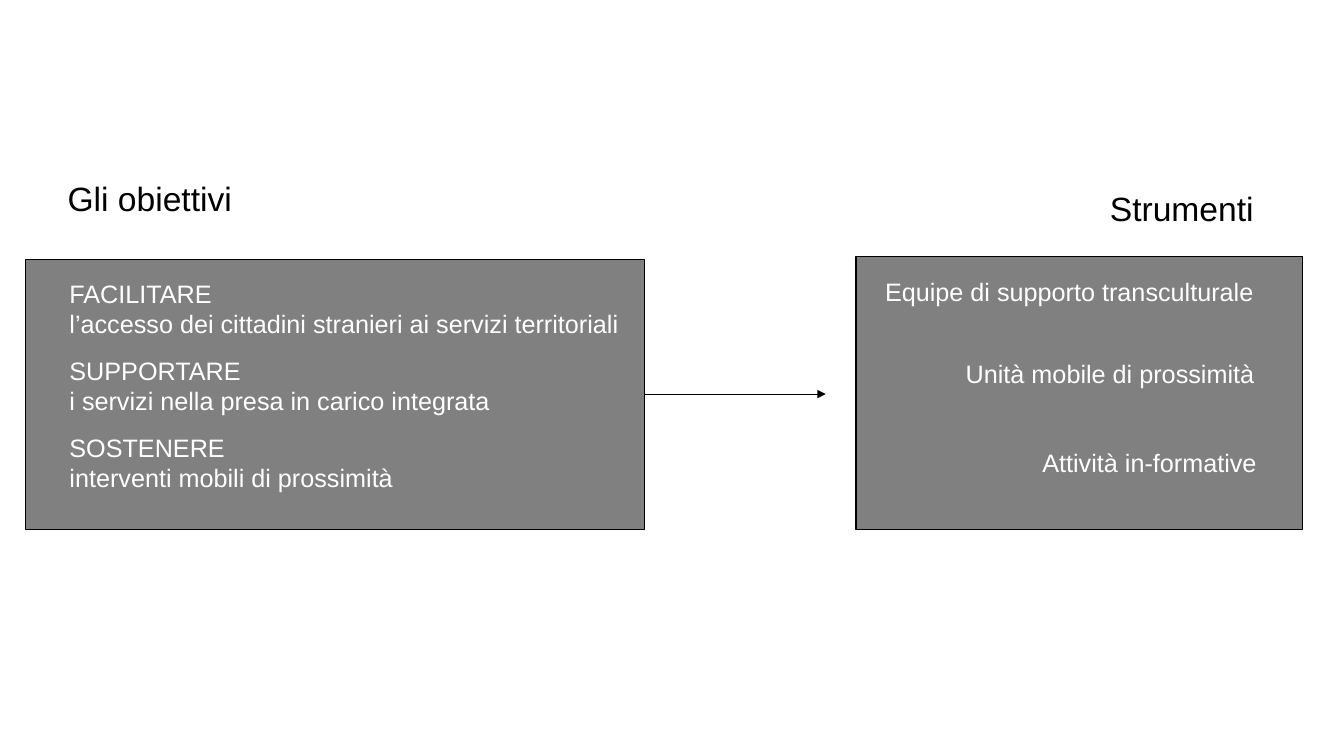
from lxml import etree
from pptx import Presentation
from pptx.dml.color import RGBColor
from pptx.enum.shapes import MSO_CONNECTOR, MSO_SHAPE
from pptx.enum.text import MSO_ANCHOR, MSO_AUTO_SIZE, PP_ALIGN
from pptx.oxml.ns import qn
from pptx.util import Inches, Pt

RECTANGLE = MSO_SHAPE.RECTANGLE
STRAIGHT = MSO_CONNECTOR.STRAIGHT
TOP = MSO_ANCHOR.TOP
LEFT = PP_ALIGN.LEFT
NO_AUTOFIT = MSO_AUTO_SIZE.NONE

BLACK, WHITE, GRAY = "000000", "FFFFFF", "808080"
RIGHT_EDGE = 13.14


def color(value):
    return RGBColor.from_string(value)


def fill_text(s, lines, size, text_color, inset):
    """Write lines as left-aligned paragraphs from the top of the shape."""
    tf = s.text_frame
    tf.text = "\n".join(lines)
    tf.word_wrap = True
    tf.auto_size = NO_AUTOFIT
    tf.vertical_anchor = TOP
    tf.margin_left = tf.margin_right = Inches(inset)
    tf.margin_top = tf.margin_bottom = Inches(inset)
    for p in tf.paragraphs:
        p.alignment = LEFT
        for r in p.runs:
            r.font.name = "Arial"
            r.font.size = Pt(size)
            r.font.color.rgb = color(text_color)


prs = Presentation()
prs.slide_width, prs.slide_height = Inches(13.33), Inches(7.5)
slide = prs.slides.add_slide(prs.slide_layouts[5])

# Panels
panels = []
for left, top, width, height in [(8.49, 2.54, 4.43, 2.71), (0.25, 2.57, 6.14, 2.68)]:
    s = slide.shapes.add_shape(
        RECTANGLE, Inches(left), Inches(top), Inches(width), Inches(height))
    s.shadow.inherit = False
    s.fill.solid()
    s.fill.fore_color.rgb = color(GRAY)
    s.line.color.rgb = color(BLACK)
    s.line.width = Pt(0.75)
    panels.append(s)
tools_panel, goals_panel = panels

# Title
title = slide.shapes.title
title.left, title.top = Inches(0.67), Inches(1.76)
title.width, title.height = Inches(11.99), Inches(0.72)
fill_text(title, ["Gli obiettivi"], 24, BLACK, 0)

# Goals, tools and the heading of the tools
goals = [
    ("FACILITARE", "l’accesso dei cittadini stranieri ai servizi territoriali"),
    ("SUPPORTARE", "i servizi nella presa in carico integrata"),
    ("SOSTENERE", "interventi mobili di prossimità"),
]
texts = [(0.59, 2.66 + 0.765 * i, 5.92, goal, 18, WHITE) for i, goal in enumerate(goals)]
for left, top, label, size, text_color in [
    (8.68, 2.64, "Equipe di supporto transculturale", 18, WHITE),
    (9.48, 3.45, "Unità mobile di prossimità", 18, WHITE),
    (10.24, 4.34, "Attività in-formative", 18, WHITE),
    (10.91, 1.76, "Strumenti", 24, BLACK),
]:
    texts.append((left, top, RIGHT_EDGE - left, [label], size, text_color))

for left, top, width, lines, size, text_color in texts:
    s = slide.shapes.add_textbox(Inches(left), Inches(top), Inches(width), Inches(0.65))
    fill_text(s, lines, size, text_color, 0.1)

# Arrow from goals to tools
arrow = slide.shapes.add_connector(
    STRAIGHT, Inches(6.39), Inches(3.91), Inches(8.19), Inches(3.91))
arrow.begin_connect(goals_panel, 3)
arrow.line.color.rgb = color(BLACK)
arrow.line.width = Pt(0.75)
etree.SubElement(arrow.line._get_or_add_ln(), qn("a:tailEnd"), type="triangle")
etree.SubElement(arrow._element.spPr, qn("a:effectLst"))

prs.save("out.pptx")
